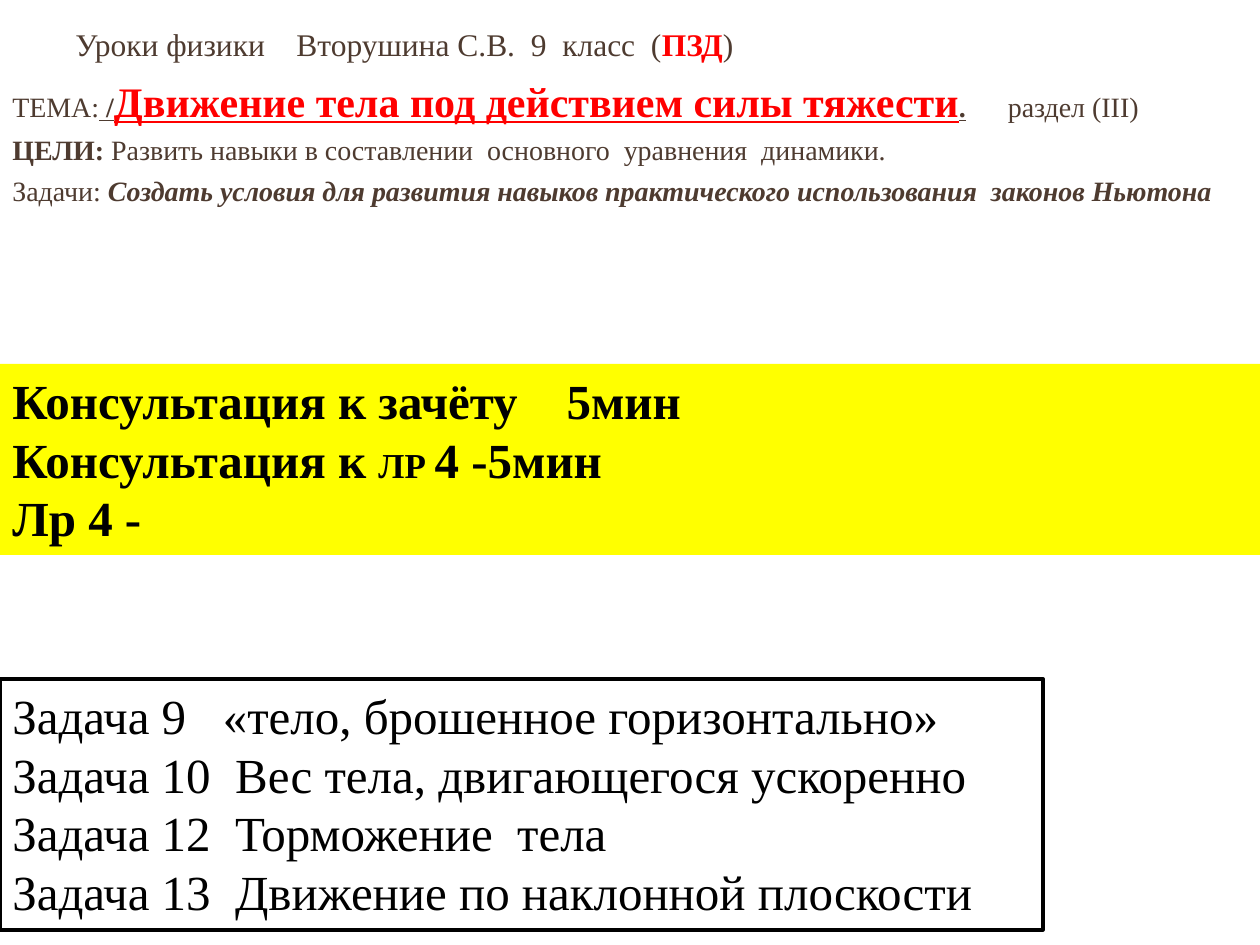
"""Build a physics lesson slide with its topic, consultations and tasks."""
from pptx import Presentation
from pptx import util as u
from pptx.dml.color import RGBColor
from pptx.enum import shapes, text

PX = u.Inches(1) / 126
FONT = "Times New Roman"
BROWN = RGBColor(0x4E, 0x3B, 0x30)
RED = RGBColor(0xFF, 0x00, 0x00)
BLACK = RGBColor(0x00, 0x00, 0x00)
WHITE = RGBColor(0xFF, 0xFF, 0xFF)
YELLOW = RGBColor(0xFF, 0xFF, 0x00)

BOLD = {"bold": True}
HEADING = [("Уроки физики    Вторушина С.В.  9  класс  (", {}),
           ("ПЗД", {"bold": True, "color": RED}), (")", {})]
GOALS = [
    [("ТЕМА:", {}), (" /", {"bold": True, "underline": True}),
     ("Движение тела под действием силы тяжести",
      {"bold": True, "underline": True, "size": 24, "color": RED}),
     (".", {"bold": True, "underline": True}), ("      раздел (III)", {})],
    [("ЦЕЛИ:", BOLD),
     (" Развить навыки в составлении  основного  уравнения  динамики.", {})],
    [("Задачи:", {}),
     (" Создать условия для развития навыков практического использования  законов Ньютона",
      {"bold": True, "italic": True})],
]
TASKS = [[(task, {})] for task in (
    "Задача 9   «тело, брошенное горизонтально»",
    "Задача 10  Вес тела, двигающегося ускоренно",
    "Задача 12  Торможение  тела",
    "Задача 13  Движение по наклонной плоскости")]
CONSULTATIONS = [
    [("Консультация к зачёту    5мин", BOLD)],
    [("Консультация к ", BOLD), ("ЛР ", {"bold": True, "size": 20}), ("4 -5мин", BOLD)],
    [("Лр 4 -", BOLD)],
]


def px(*lengths):
    """Turn pixel lengths into EMU."""
    return [round(length * PX) for length in lengths]


def style(font, size=None, color=None, **flags):
    """Apply size, colour and flags such as bold to a font."""
    if size:
        font.size = u.Pt(size)
    if color is not None:
        font.color.rgb = color
    for flag, value in flags.items():
        setattr(font, flag, value)


def write(frame, lines, size, color, space=0, hanging=0):
    """Fill a text frame with lines of styled runs."""
    frame.word_wrap = True
    for number, line in enumerate(lines):
        paragraph = frame.add_paragraph() if number else frame.paragraphs[0]
        paragraph.alignment = text.PP_ALIGN.LEFT
        paragraph.space_before = u.Pt(space)
        style(paragraph.font, size, color, name=FONT)
        if hanging:
            indent, = px(hanging)
            properties = paragraph._p.get_or_add_pPr()
            properties.set("marL", str(indent))
            properties.set("indent", str(-indent))
        for words, look in line:
            run = paragraph.add_run()
            run.text = words
            style(run.font, **look)


def add_text(slide, box, lines, size, anchor=text.MSO_ANCHOR.TOP, **spacing):
    """Add brown text without a background."""
    frame = slide.shapes.add_textbox(*px(*box)).text_frame
    frame.vertical_anchor = anchor
    write(frame, lines, size, BROWN, **spacing)


def add_panel(slide, box, lines, fill, outline=None):
    """Add a filled rectangle with large black text."""
    panel = slide.shapes.add_shape(shapes.MSO_SHAPE.RECTANGLE, *px(*box))
    panel.shadow.inherit = False
    panel.fill.solid()
    panel.fill.fore_color.rgb = fill
    if outline is None:
        panel.line.fill.background()
    else:
        panel.line.color.rgb = outline
        panel.line.width = u.Pt(2)
    panel.text_frame.vertical_anchor = text.MSO_ANCHOR.TOP
    write(panel.text_frame, lines, 28, BLACK)


def main():
    """Build and save the slide."""
    deck = Presentation()
    deck.slide_width, deck.slide_height = px(1260, 945)
    slide = deck.slides.add_slide(deck.slide_layouts[6])
    add_text(slide, (63, 0, 1197, 88), [HEADING], 18, text.MSO_ANCHOR.MIDDLE)
    add_text(slide, (0, 69, 1260, 129), GOALS, 16, space=4, hanging=48)
    add_panel(slide, (0, 679, 1043, 251), TASKS, WHITE, BLACK)
    add_panel(slide, (0, 364, 1260, 191), CONSULTATIONS, YELLOW)
    deck.save("out.pptx")


if __name__ == "__main__":
    main()
